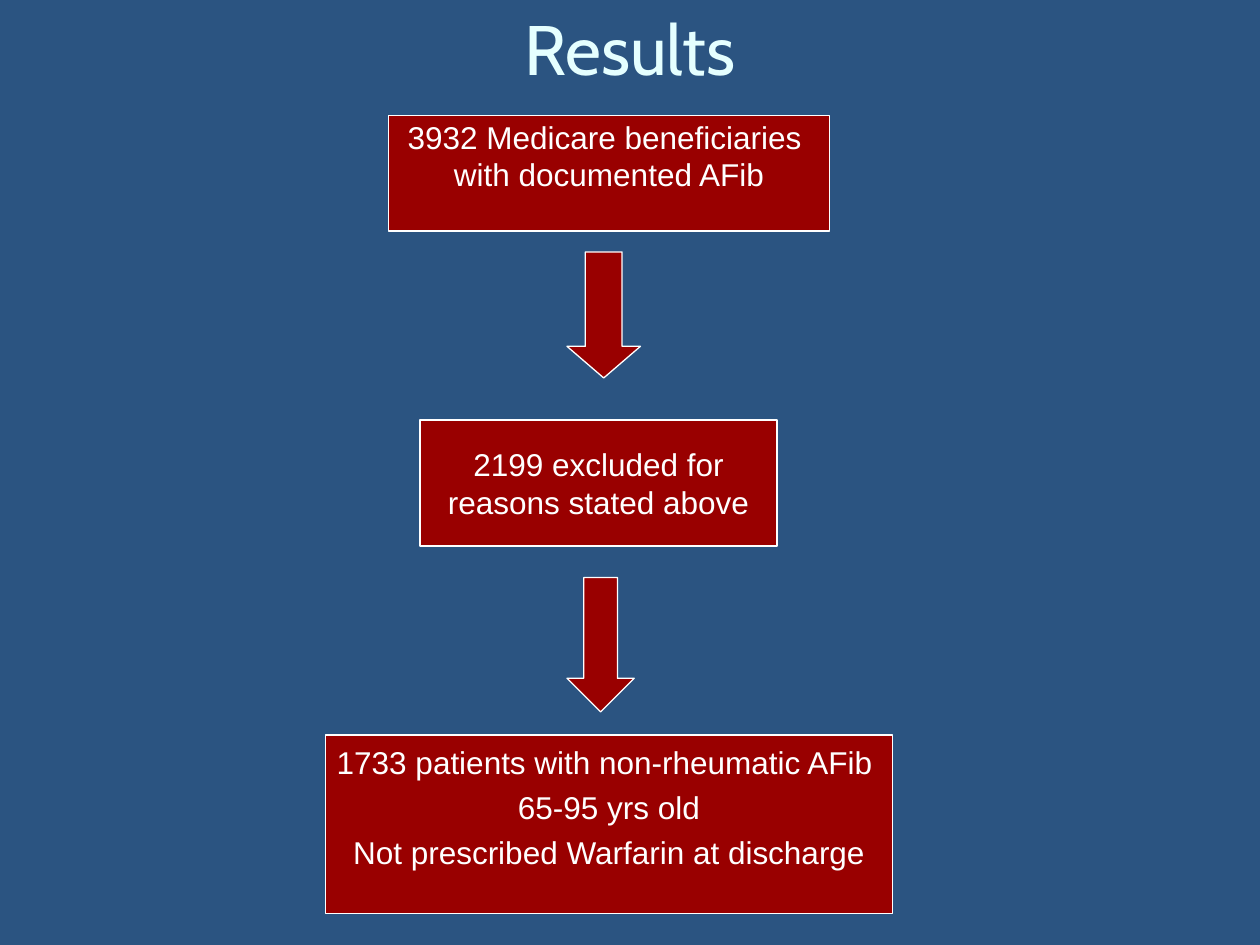
import pptx
import pptx.dml.color
import pptx.enum.shapes
import pptx.enum.text
import pptx.util

PX = 7620  # EMU per px, 120 px to the inch
SLIDE_SIZE = (1200, 900)
NAVY, RED, WHITE, ICE = "2B5481", "990000", "FFFFFF", "E5FFFF"
ANCHOR = pptx.enum.text.MSO_ANCHOR
SHAPE = pptx.enum.shapes.MSO_SHAPE


def color(hex_string):
    return pptx.dml.color.RGBColor.from_string(hex_string)


def emu(box):
    return [length * PX for length in box]


def set_attributes(target, formats):
    for name, value in formats.items():
        setattr(target, name, value)


def write_lines(frame, lines, font, size, hex_string, spacing=0, **frame_formats):
    """Write centred paragraphs, with spacing in points between them."""
    set_attributes(frame, frame_formats)
    for index, line in enumerate(lines):
        paragraph = frame.add_paragraph() if index else frame.paragraphs[0]
        paragraph.text = line
        set_attributes(paragraph, {
            "alignment": pptx.enum.text.PP_ALIGN.CENTER,
            "space_before": pptx.util.Pt(spacing if index else 0),
        })
        set_attributes(paragraph.font, {"name": font, "size": pptx.util.Pt(size)})
        paragraph.font.color.rgb = color(hex_string)


def add_title(slide, box, title):
    heading = slide.shapes.add_textbox(*emu(box))
    write_lines(heading.text_frame, [title], "Cabin", 40, ICE,
                word_wrap=True, vertical_anchor=ANCHOR.MIDDLE)


def add_red_shape(slide, preset, box):
    red_shape = slide.shapes.add_shape(preset, *emu(box))
    red_shape.shadow.inherit = False
    red_shape.fill.solid()
    red_shape.fill.fore_color.rgb = color(RED)
    red_shape.line.color.rgb = color(WHITE)
    red_shape.line.width = pptx.util.Pt(0.75)
    return red_shape


def add_step(slide, box, lines, spacing=0, **frame_formats):
    step = add_red_shape(slide, SHAPE.RECTANGLE, box)
    write_lines(step.text_frame, lines, "Arial", 18, WHITE, spacing,
                word_wrap=False, **frame_formats)


def add_down_arrow(slide, box, head_ratio):
    """Draw a down arrow; head_ratio is head length over arrow width."""
    arrow = add_red_shape(slide, SHAPE.DOWN_ARROW, box)
    arrow.adjustments[0] = 0.5
    arrow.adjustments[1] = head_ratio


def add_patient_flow(slide, box):
    left, top = box[:2]

    def place(x, y, width, height):
        return left + x, top + y, width, height

    add_step(slide, place(60, 0, 420, 110),
             ["3932 Medicare beneficiaries ", "with documented AFib"],
             vertical_anchor=ANCHOR.TOP, margin_top=2 * PX)
    add_down_arrow(slide, place(230, 130, 70, 120), 0.43)
    add_step(slide, place(90, 290, 340, 120),
             ["2199 excluded for", "reasons stated above"],
             vertical_anchor=ANCHOR.MIDDLE)
    add_down_arrow(slide, place(230, 440, 64, 128), 0.5)
    add_step(slide, place(0, 590, 540, 170),
             ["1733 patients with non-rheumatic AFib ", "65-95 yrs old",
              "Not prescribed Warfarin at discharge"],
             spacing=4, vertical_anchor=ANCHOR.TOP, margin_top=8 * PX)


def main():
    deck = pptx.Presentation()
    deck.slide_width, deck.slide_height = emu(SLIDE_SIZE)
    slide = deck.slides.add_slide(deck.slide_layouts[6])
    slide.background.fill.solid()
    slide.background.fill.fore_color.rgb = color(NAVY)
    add_title(slide, (60, 0, 1080, 90), "Results")
    add_patient_flow(slide, (310, 110, 540, 760))
    deck.save("out.pptx")


if __name__ == "__main__":
    main()
